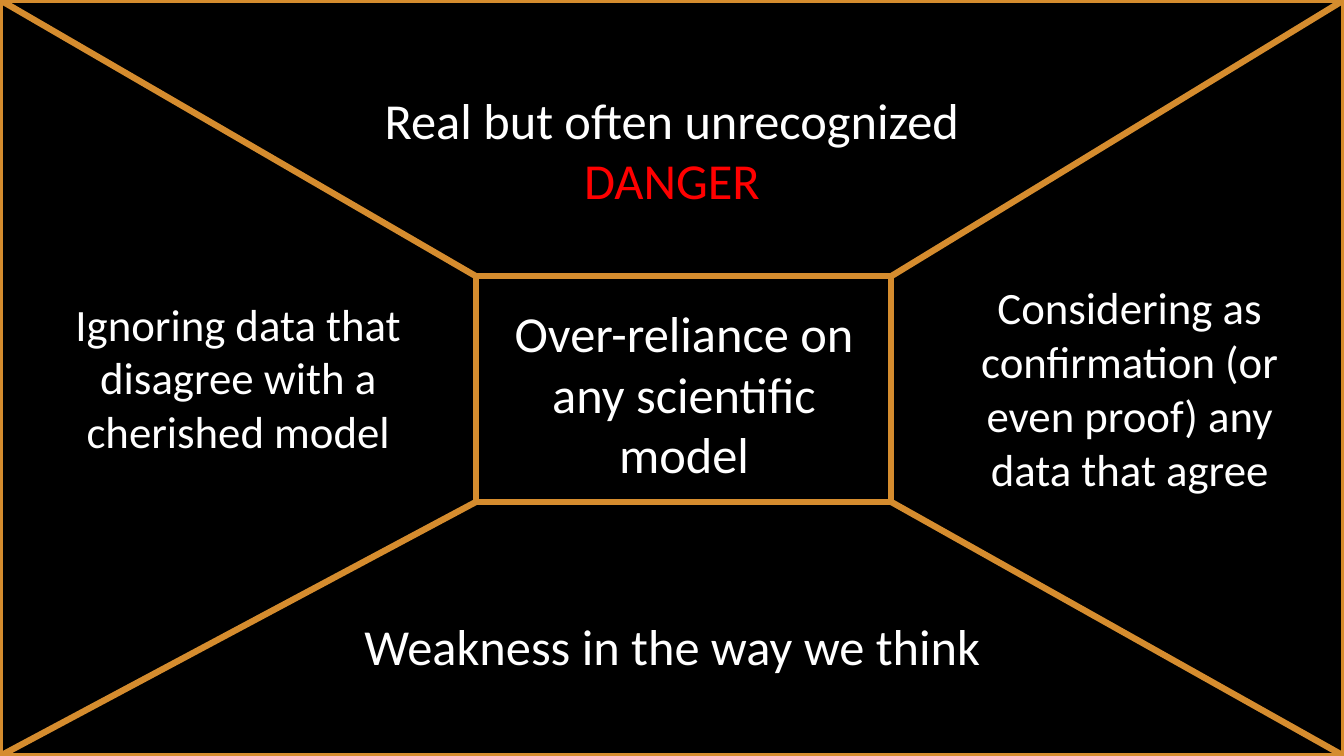
from lxml import etree
from pptx import Presentation
from pptx.dml.color import RGBColor
from pptx.enum import shapes, text
from pptx.oxml import ns
from pptx.util import Inches, Pt

BLACK = RGBColor(0x00, 0x00, 0x00)
ORANGE = RGBColor(0xD5, 0x8C, 0x2E)
WHITE = RGBColor(0xFF, 0xFF, 0xFF)
RED = RGBColor(0xFF, 0x00, 0x00)
SLIDE_BOX = (0, 0, 13.33, 7.5)
CENTER_BOX = (4.72, 2.74, 4.12, 2.24)
LINE_WIDTH = Pt(4.5)


def corners(box):
    """Return the four corners of a box in a fixed order."""
    left, top, width, height = box
    return [(x, y) for x in (left, left + width) for y in (top, top + height)]


def add_frame(slide, box):
    """Outline a box."""
    frame = slide.shapes.add_shape(shapes.MSO_SHAPE.RECTANGLE, *map(Inches, box))
    frame.shadow.inherit = False
    frame.fill.background()
    frame.line.color.rgb = ORANGE
    frame.line.width = LINE_WIDTH


def add_diagonals(slide, inner, outer):
    """Join the matching corners of two boxes."""
    for start, end in zip(corners(inner), corners(outer)):
        line = slide.shapes.add_connector(
            shapes.MSO_CONNECTOR.STRAIGHT, *map(Inches, start + end))
        line.line.color.rgb = ORANGE
        line.line.width = LINE_WIDTH
        etree.SubElement(line._element.spPr, ns.qn("a:effectLst"))


def write_statement(shape, pieces, size):
    """Fill a shape with one centred paragraph of coloured pieces."""
    frame = shape.text_frame
    frame.word_wrap = True
    frame.auto_size = text.MSO_AUTO_SIZE.SHAPE_TO_FIT_TEXT
    frame.vertical_anchor = text.MSO_ANCHOR.TOP
    paragraph = frame.paragraphs[0]
    paragraph.alignment = text.PP_ALIGN.CENTER
    for wording, color in pieces:
        run = paragraph.add_run()
        run.text = wording
        run.font.name = "Calibri"
        run.font.size = Pt(size)
        run.font.color.rgb = color


def add_title(slide, box):
    """Place the two-coloured title in the upper region."""
    title = slide.shapes.title
    title.left, title.top, title.width, title.height = map(Inches, box)
    write_statement(
        title, [("Real but often unrecognized ", WHITE), ("DANGER", RED)], 36)


def add_statement(slide, box, wording, size):
    """Place a white statement in its region."""
    statement = slide.shapes.add_textbox(*map(Inches, box))
    write_statement(statement, [(wording, WHITE)], size)


def build_danger_slide(presentation):
    """Build the slide of four regions around a central box."""
    slide = presentation.slides.add_slide(presentation.slide_layouts[5])
    slide.background.fill.solid()
    slide.background.fill.fore_color.rgb = BLACK
    add_frame(slide, CENTER_BOX)
    add_diagonals(slide, CENTER_BOX, SLIDE_BOX)
    add_frame(slide, SLIDE_BOX)
    add_title(slide, (3.68, 0.83, 5.97, 1.31))
    add_statement(slide, (9.45, 2.73, 3.51, 2.26),
                  "Considering as confirmation (or even proof) any data that agree", 32)
    add_statement(slide, (4.97, 2.95, 3.63, 1.92),
                  "Over-reliance on any scientific model", 36)
    add_statement(slide, (3.16, 6.05, 7.02, 0.71), "Weakness in the way we think", 36)
    add_statement(slide, (0.53, 2.89, 3.67, 1.72),
                  "Ignoring data that disagree with a cherished model", 32)


def main():
    """Create and save the presentation."""
    presentation = Presentation()
    presentation.slide_width, presentation.slide_height = map(Inches, SLIDE_BOX[2:])
    build_danger_slide(presentation)
    presentation.save("out.pptx")


if __name__ == "__main__":
    main()
